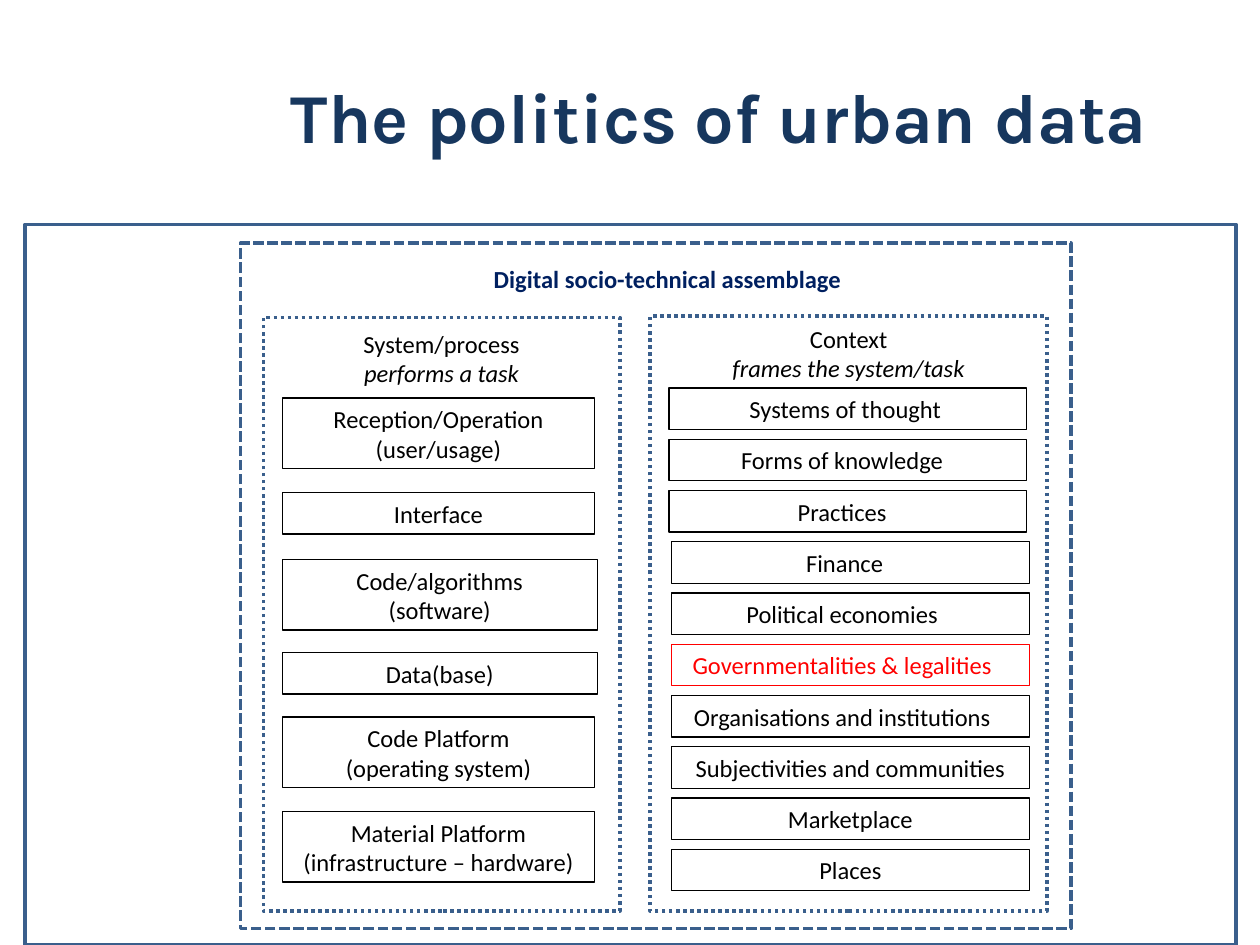
from lxml.etree import SubElement
from pptx import Presentation
from pptx.dml.color import RGBColor
from pptx.enum.dml import MSO_LINE
from pptx.enum.shapes import MSO_SHAPE
from pptx.enum.text import MSO_ANCHOR, MSO_AUTO_SIZE, PP_ALIGN
from pptx.oxml.ns import qn
from pptx.util import Inches, Pt

BLACK, WHITE, RED = "000000", "FFFFFF", "FF0000"
STEEL, NAVY, TITLE_BLUE = "3A5F8C", "002060", "17375E"

COMPONENTS = [
    (3.16, 2.48, 0.56, ["Reception/Operation (user/usage)"]),
    (3.91, 2.48, 0.33, ["Interface"]),
    (4.44, 2.5, 0.56, ["Code/algorithms", "(software)"]),
    (5.18, 2.5, 0.33, ["Data(base)"]),
    (5.69, 2.48, 0.56, ["Code Platform", "(operating system)"]),
    (6.44, 2.48, 0.56, ["Material Platform", "(infrastructure – hardware)"]),
]
CONTEXTS = [
    ("Systems of thought", 0.14),
    ("Forms of knowledge", 0.19),
    ("Practices", 0.19),
    ("Finance", 0.19),
    ("Political economies", 0.23),
    ("Governmentalities & legalities", 0.23),
    ("Organisations and institutions", 0.23),
    ("Subjectivities and communities", 0.1),
    ("Marketplace", 0.1),
    ("Places", 0.1),
]
CONTEXT_TOP, CONTEXT_PITCH = 3.08, 3.66 / 9


def color(value):
    return RGBColor.from_string(value)


class AssemblageSlide:
    """Draws the elements of the assemblage diagram in one shared style."""

    font_name = "Calibri"
    font_size = 14

    def __init__(self, presentation):
        self.slide = presentation.slides.add_slide(presentation.slide_layouts[5])

    def title(self, text, left, top, width, height):
        shape = self.slide.shapes.title
        shape.left, shape.top = Inches(left), Inches(top)
        shape.width, shape.height = Inches(width), Inches(height)
        shape.fill.solid()
        shape.fill.fore_color.rgb = color(WHITE)
        fill_color = shape.element.spPr.find(qn("a:solidFill"))[0]
        SubElement(fill_color, qn("a:alpha")).set("val", "80000")
        shape.text_frame.text = text
        shape.text_frame.vertical_anchor = MSO_ANCHOR.MIDDLE
        paragraph = shape.text_frame.paragraphs[0]
        paragraph.alignment = PP_ALIGN.CENTER
        self.style(paragraph.font, TITLE_BLUE, 40, "Karla", bold=True)

    def style(self, font, font_color, size=font_size, name=font_name, bold=False, italic=False):
        font.name, font.size = name, Pt(size)
        font.bold, font.italic = bold, italic
        font.color.rgb = color(font_color)

    def frame(self, left, top, width, height, line=STEEL, weight=2, dash=None, fill=None):
        shape = self.slide.shapes.add_shape(
            MSO_SHAPE.RECTANGLE, Inches(left), Inches(top), Inches(width), Inches(height))
        shape.shadow.inherit = False
        if fill:
            shape.fill.solid()
            shape.fill.fore_color.rgb = color(fill)
        else:
            shape.fill.background()
        shape.line.color.rgb = color(line)
        shape.line.width = Pt(weight)
        if dash:
            shape.line.dash_style = dash
        return shape

    def set_text(self, shape, lines, font_color=BLACK, bold=False, italic_from=None, wrap=True):
        text_frame = shape.text_frame
        text_frame.word_wrap = wrap
        text_frame.auto_size = MSO_AUTO_SIZE.SHAPE_TO_FIT_TEXT
        text_frame.vertical_anchor = MSO_ANCHOR.TOP
        text_frame.text = "\n".join(lines)
        for index, paragraph in enumerate(text_frame.paragraphs):
            paragraph.alignment = PP_ALIGN.CENTER if wrap else PP_ALIGN.LEFT
            italic = italic_from is not None and index >= italic_from
            self.style(paragraph.font, font_color, bold=bold, italic=italic)

    def box(self, left, top, width, height, lines, accent=BLACK, right_margin=0.1):
        shape = self.frame(left, top, width, height, accent, 0.75)
        shape.text_frame.margin_right = Inches(right_margin)
        self.set_text(shape, lines, accent)

    def label(self, left, top, width, height, lines, **text_style):
        shape = self.slide.shapes.add_textbox(
            Inches(left), Inches(top), Inches(width), Inches(height))
        self.set_text(shape, lines, **text_style)


def main():
    presentation = Presentation()
    presentation.slide_width, presentation.slide_height = Inches(10), Inches(7.5)
    diagram = AssemblageSlide(presentation)

    diagram.frame(0.2, 1.78, 9.61, 5.72, fill=WHITE)
    diagram.title("The politics of urban data", 1.61, 0.21, 8.19, 1.42)
    diagram.frame(1.91, 1.93, 6.59, 5.44, dash=MSO_LINE.SQUARE_DOT)
    diagram.frame(2.09, 2.52, 2.83, 4.71, dash=MSO_LINE.ROUND_DOT)
    diagram.frame(5.16, 2.51, 3.15, 4.72, dash=MSO_LINE.ROUND_DOT)

    diagram.label(3.82, 2.05, 2.98, 0.33, ["Digital socio-technical assemblage"],
                  font_color=NAVY, bold=True, wrap=False)
    diagram.label(2.09, 2.56, 2.83, 0.56, ["System/process", "performs a task"], italic_from=1)
    diagram.label(5.24, 2.52, 2.99, 0.56, ["Context", "frames the system/task"], italic_from=1)

    for top, width, height, lines in COMPONENTS:
        diagram.box(2.24, top, width, height, lines)
    for index, (text, right_margin) in enumerate(CONTEXTS):
        left = 5.31 if index < 3 else 5.33
        accent = RED if text.startswith("Governmentalities") else BLACK
        diagram.box(left, CONTEXT_TOP + index * CONTEXT_PITCH, 2.84, 0.33,
                    [text], accent, right_margin)

    presentation.save("out.pptx")


if __name__ == "__main__":
    main()
